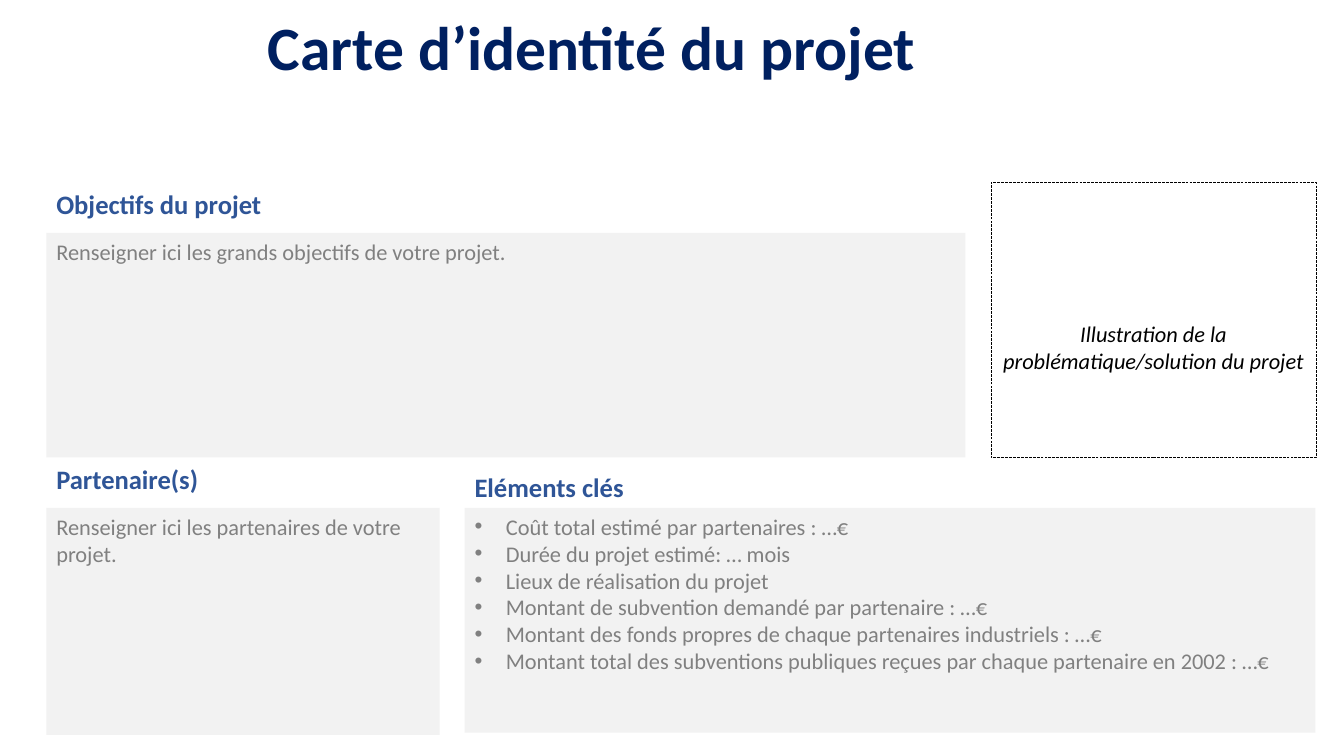
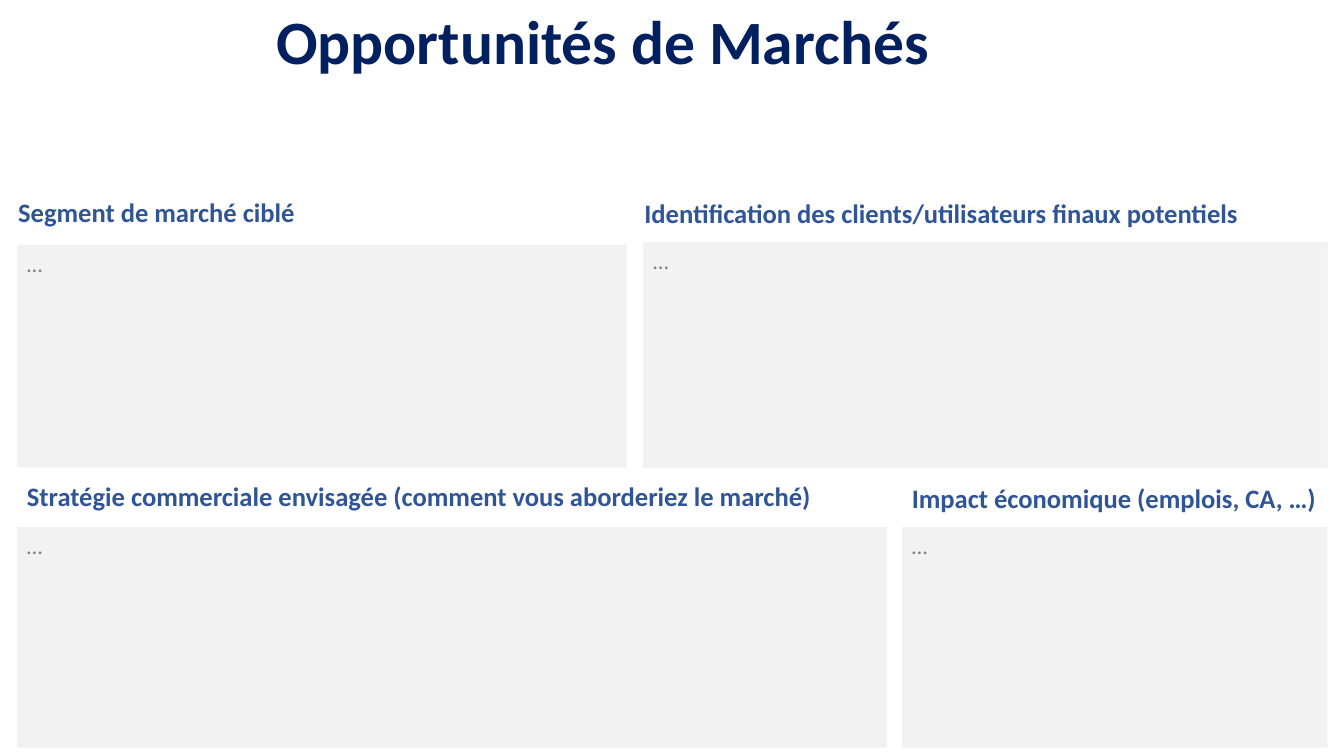
from lxml import etree
from pptx import Presentation
from pptx.dml.color import RGBColor
from pptx.enum import dml, shapes, text
from pptx.oxml import ns
from pptx.util import Cm, Pt

NAVY = RGBColor(0x00, 0x20, 0x60)
BLUE = RGBColor(0x2F, 0x55, 0x97)
GREY = RGBColor(0x80, 0x80, 0x80)
PALE = RGBColor(0xF2, 0xF2, 0xF2)
BLACK = RGBColor(0, 0, 0)
FONT = "Calibri"
HEADING_HEIGHT = 1.07
LEFT, CENTER, JUSTIFY = (text.PP_ALIGN.LEFT, text.PP_ALIGN.CENTER,
                         text.PP_ALIGN.JUSTIFY)
TOP, MIDDLE = text.MSO_ANCHOR.TOP, text.MSO_ANCHOR.MIDDLE


def add_bullet(p, indent=0.79):
    """Give the paragraph a round bullet with a hanging indent."""
    pPr = p._p.get_or_add_pPr()
    pPr.set("marL", str(Cm(indent)))
    pPr.set("indent", str(-Cm(indent)))
    etree.SubElement(pPr, ns.qn("a:buFont")).set("typeface", "Arial")
    etree.SubElement(pPr, ns.qn("a:buChar")).set("char", "•")


def write(sp, lines, size=16, color=GREY, bold=False, italic=False,
          align=LEFT, anchor=TOP, bullets=False, wrap=True, spacing=None):
    """Fill a shape with one paragraph per line."""
    tf = sp.text_frame
    tf.word_wrap = wrap
    tf.vertical_anchor = anchor
    for i, line in enumerate(lines):
        p = tf.paragraphs[0] if i == 0 else tf.add_paragraph()
        p.alignment = align
        if spacing:
            p.line_spacing = spacing
        if bullets:
            add_bullet(p)
        r = p.add_run()
        r.text = line
        r.font.name, r.font.size = FONT, Pt(size)
        r.font.bold, r.font.italic = bold, italic
        r.font.color.rgb = color


def add_box(s, box):
    """Add a plain rectangle without fill, line or shadow."""
    sp = s.shapes.add_shape(shapes.MSO_SHAPE.RECTANGLE, *map(Cm, box))
    sp.shadow.inherit = False
    sp.fill.background()
    sp.line.fill.background()
    return sp


def add_title(s, box, title):
    sp = s.shapes.add_textbox(*map(Cm, box))
    write(sp, [title], size=44, color=NAVY, bold=True, anchor=MIDDLE,
          spacing=0.9)


def add_section(s, box, heading, lines, rise=1.27, shift=0, **style):
    """Grey panel in the box, with its heading `rise` above the top edge."""
    left, top, width, _ = box
    panel = add_box(s, box)
    panel.fill.solid()
    panel.fill.fore_color.rgb = PALE
    write(panel, lines, **{"align": JUSTIFY, **style})
    label = s.shapes.add_textbox(Cm(left + shift), Cm(top - rise),
                                 Cm(width), Cm(HEADING_HEIGHT))
    write(label, [heading], size=19, color=BLUE, bold=True, wrap=False)


def add_illustration(s, box, caption):
    """Dashed frame that reserves room for an illustration."""
    frame = add_box(s, box)
    frame.line.color.rgb = BLACK
    frame.line.width = Pt(0.25)
    frame.line.dash_style = dml.MSO_LINE.LONG_DASH
    frame.text_frame.margin_top = Cm(box[3] / 2)
    write(frame, [caption], color=BLACK, italic=True, align=CENTER)


def build_identity(s):
    add_title(s, (6.5, 0, 24.2, 2.54), "Carte d’identité du projet")

    # Goals and illustration
    add_section(s, (1.17, 5.87, 23.16, 5.66), "Objectifs du projet",
                ["Renseigner ici les grands objectifs de votre projet."])
    add_illustration(s, (24.97, 4.6, 8.2, 6.93),
                     "Illustration de la problématique/solution du projet")

    # Partners and key facts
    add_section(s, (1.17, 12.8, 9.91, 5.72), "Partenaire(s)",
                ["Renseigner ici les partenaires de votre projet."],
                align=LEFT)
    add_section(s, (11.71, 12.8, 21.44, 5.66), "Eléments clés", [
        "Coût total estimé par partenaires : …€",
        "Durée du projet estimé: … mois",
        "Lieux de réalisation du projet",
        "Montant de subvention demandé par partenaire : …€",
        "Montant des fonds propres de chaque partenaires industriels : …€",
        "Montant total des subventions publiques reçues par chaque "
        "partenaire en 2002 : …€",
    ], rise=1.07, bullets=True)


def build_market(s):
    add_title(s, (6.71, 0.15, 27, 1.96), "Opportunités de Marchés")

    # Target market, then strategy and impact
    for box, heading, rise, shift in (
        ((0.43, 6.17, 15.37, 5.61), "Segment de marché ciblé", 1.35, -0.22),
        ((16.21, 6.1, 17.25, 5.69),
         "Identification des clients/utilisateurs finaux potentiels",
         1.27, -0.22),
        ((0.43, 13.28, 21.92, 5.56),
         "Stratégie commerciale envisagée (comment vous aborderiez le marché)",
         1.3, 0),
        ((22.73, 13.28, 10.72, 5.56),
         "Impact économique (emplois, CA, …)", 1.27, 0),
    ):
        add_section(s, box, heading, ["…"], rise=rise, shift=shift)


def main():
    prs = Presentation()
    prs.slide_width, prs.slide_height = Cm(33.87), Cm(19.05)
    for build in (build_identity, build_market):
        build(prs.slides.add_slide(prs.slide_layouts[6]))
    prs.save("out.pptx")


if __name__ == "__main__":
    main()
